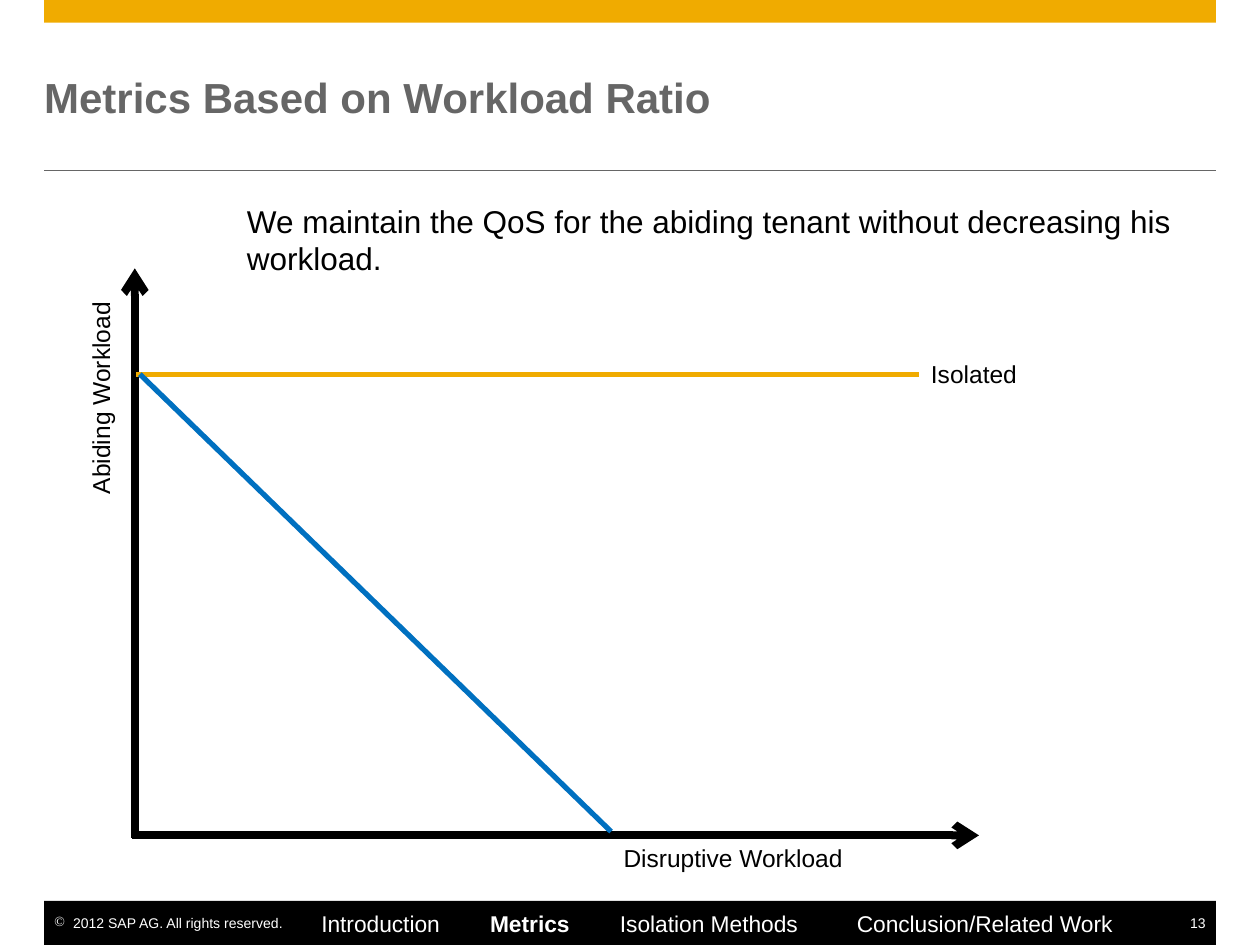
from lxml import etree
from pptx import Presentation
from pptx.dml.color import RGBColor
from pptx.enum.shapes import MSO_CONNECTOR, MSO_SHAPE
from pptx.enum.text import MSO_ANCHOR, PP_ALIGN
from pptx.oxml.ns import qn
from pptx.util import Inches, Pt

STRAIGHT, RECT = MSO_CONNECTOR.STRAIGHT, MSO_SHAPE.RECTANGLE
TOP, MIDDLE = MSO_ANCHOR.TOP, MSO_ANCHOR.MIDDLE
LEFT, RIGHT = PP_ALIGN.LEFT, PP_ALIGN.RIGHT

COLORS = {"gold": "F0AB00", "gray": "666666", "black": "000000",
          "white": "FFFFFF", "blue": "0070C0"}
MARGIN, WIDTH = 0.35, 9.3
NO_INSETS = (0, 0, 0, 0)
LABEL_INSETS = (0.1, 0.05, 0.1, 0.05)

TITLE = "Metrics Based on Workload Ratio"
BARS = [(0, 0.18, "gold"), (7.15, 0.35, "black")]
LINES = [
    ((MARGIN, 1.35), (MARGIN + WIDTH, 1.35), "gray", 0.5, False),
    ((1.07, 6.65), (1.07, 2.13), "black", 4.5, True),
    ((1.05, 6.63), (7.77, 6.63), "black", 4.5, True),
    ((1.08, 2.97), (7.29, 2.97), "gold", 3, False),
    ((1.11, 2.97), (4.85, 6.6), "blue", 3, False),
]
LABELS = [
    ("Disruptive Workload", (4.85, 6.64, 2.25, 0.34), 0),
    ("Isolated", (7.29, 2.8, 1.08, 0.34), 0),
    ("Abiding Workload", (-0.17, 2.88, 1.94, 0.34), 270),
]
STATEMENT = "We maintain the QoS for the abiding tenant without decreasing his workload."
COPYRIGHT = "2012 SAP AG. All rights reserved."
PAGE = "13"
SECTIONS = [("Introduction", 2.55), ("Metrics", 3.89),
            ("Isolation Methods", 4.92), ("Conclusion/Related Work", 6.8)]
CURRENT = "Metrics"


def rgb(name):
    return RGBColor.from_string(COLORS[name])


def format_font(font, size, color, bold=False):
    for key, value in {"name": "Arial", "size": Pt(size), "bold": bold}.items():
        setattr(font, key, value)
    font.color.rgb = rgb(color)


def place(sp, box):
    for key, value in zip(("left", "top", "width", "height"), box):
        setattr(sp, key, Inches(value))


def format_frame(tf, insets, anchor=TOP, wrap=True):
    for side, value in zip(("left", "top", "right", "bottom"), insets):
        setattr(tf, f"margin_{side}", Inches(value))
    tf.vertical_anchor, tf.word_wrap = anchor, wrap


def add_text(s, text, box, size, color="black", insets=NO_INSETS,
             wrap=True, align=LEFT, rotation=0):
    sp = s.shapes.add_textbox(*map(Inches, box))
    sp.rotation = rotation
    format_frame(sp.text_frame, insets, wrap=wrap)
    p = sp.text_frame.paragraphs[0]
    p.alignment = align
    if text:
        r = p.add_run()
        r.text = text
        format_font(r.font, size, color)
    return p


def add_bar(s, top, height, color):
    sp = s.shapes.add_shape(RECT, *map(Inches, (MARGIN, top, WIDTH, height)))
    sp.shadow.inherit = False
    sp.fill.solid()
    sp.fill.fore_color.rgb = rgb(color)
    sp.line.fill.background()


def add_line(s, start, end, color, width, arrow):
    line = s.shapes.add_connector(STRAIGHT, *map(Inches, start + end))
    line.line.color.rgb = rgb(color)
    line.line.width = Pt(width)
    if arrow:
        etree.SubElement(line.line._get_or_add_ln(), qn("a:tailEnd"), type="arrow")
    etree.SubElement(line._element.spPr, qn("a:effectLst"))


def add_copyright(s):
    p = add_text(s, COPYRIGHT, (MARGIN, 7.26, 1.93, 0.13), 8, "white",
                 (0.08, 0, 0, 0), wrap=False)
    pPr = p._p.get_or_add_pPr()
    pPr.set("marL", str(Inches(0.15)))
    pPr.set("indent", str(-Inches(0.15)))
    bullet_color = etree.SubElement(pPr, qn("a:buClr"))
    etree.SubElement(bullet_color, qn("a:srgbClr"), val=COLORS["white"])
    etree.SubElement(pPr, qn("a:buChar"), char="©")


def add_navigation(s):
    start = SECTIONS[0][1]
    p = add_text(s, "", (start, 7.22, 7, 0.22), 13)
    tabs = etree.SubElement(p._p.get_or_add_pPr(), qn("a:tabLst"))
    for i, (name, left) in enumerate(SECTIONS):
        if i:
            etree.SubElement(tabs, qn("a:tab"), pos=str(Inches(left - start)), algn="l")
        r = p.add_run()
        r.text = "\t" + name if i else name
        format_font(r.font, 13, "white", name == CURRENT)


def main():
    prs = Presentation()
    prs.slide_width, prs.slide_height = Inches(10), Inches(7.5)
    s = prs.slides.add_slide(prs.slide_layouts[5])

    title = s.shapes.title
    place(title, (MARGIN, 0.35, WIDTH, 0.83))
    title.text = TITLE
    format_frame(title.text_frame, NO_INSETS, MIDDLE)
    p = title.text_frame.paragraphs[0]
    p.alignment = LEFT
    format_font(p.runs[0].font, 24, "gray", True)

    for bar in BARS:
        add_bar(s, *bar)
    for line in LINES:
        add_line(s, *line)
    for text, box, rotation in LABELS:
        add_text(s, text, box, 14, insets=LABEL_INSETS, rotation=rotation)
    add_text(s, STATEMENT, (1.96, 1.6, 7.82, 0.96), 18)
    add_copyright(s)
    add_navigation(s)
    add_text(s, PAGE, (9.43, 7.26, 0.22, 0.13), 8, "white",
             (0, 0, 0.08, 0), wrap=False, align=RIGHT)
    prs.save("out.pptx")


if __name__ == "__main__":
    main()
